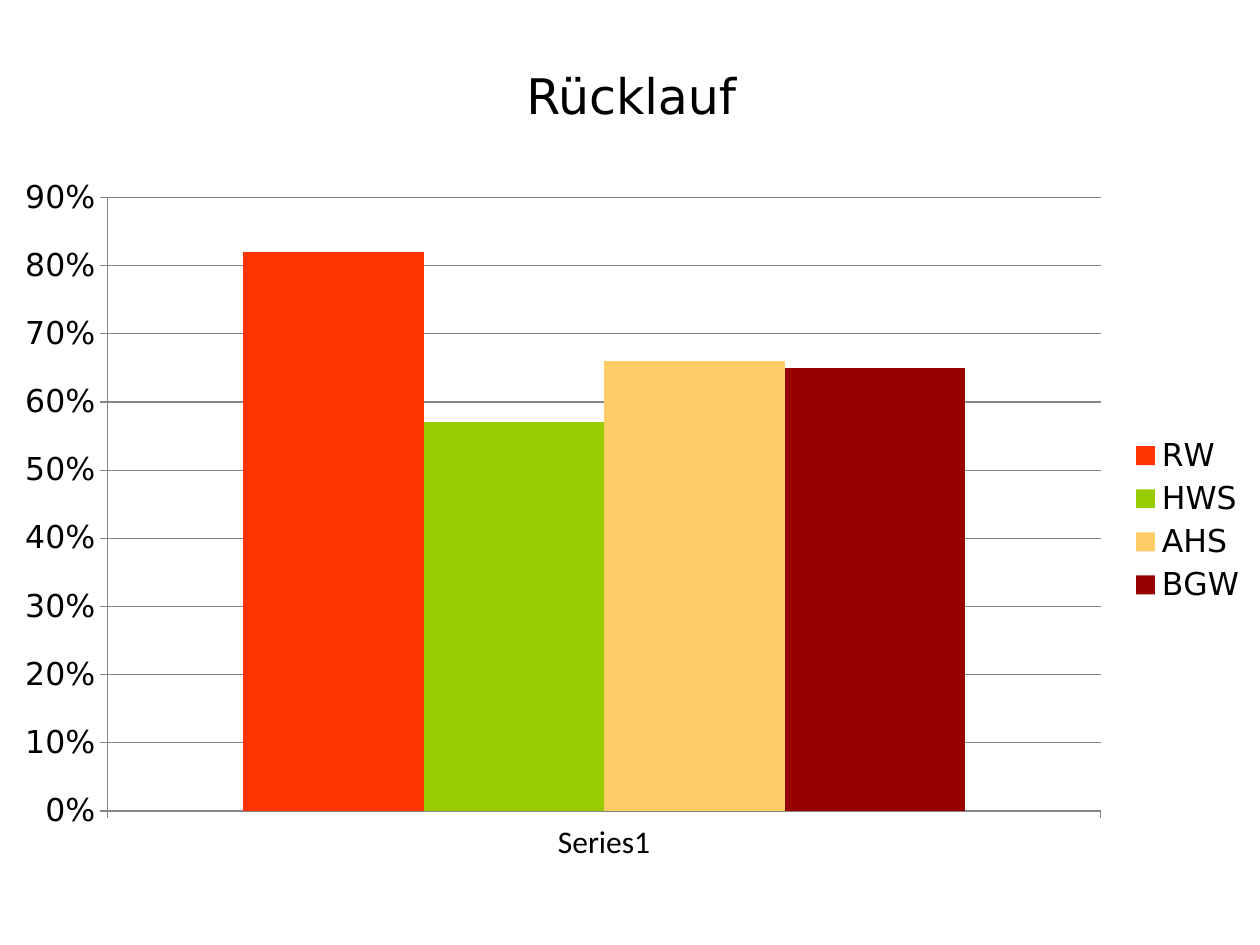
import pptx
import pptx.util
import pptx.chart.data
import pptx.dml.color
import pptx.enum.chart
import pptx.enum.text

Inches = pptx.util.Inches
Pt = pptx.util.Pt
SANS = "DejaVu Sans"
BARS = [
    ("RW", 0.82, "FF3300"),
    ("HWS", 0.57, "99CC00"),
    ("AHS", 0.66, "FFCC66"),
    ("BGW", 0.65, "990000"),
]


def paint(color, code):
    color.rgb = pptx.dml.color.RGBColor.from_string(code)


def style(font, name, size):
    font.name = name
    font.size = Pt(size)
    font.bold = False
    paint(font.color, "000000")


def rule(line):
    line.width = Pt(0.75)
    paint(line.color, "868686")


def add_title(slide, left, top, width, height):
    box = slide.shapes.add_textbox(left, top, width, height)
    frame = box.text_frame
    frame.word_wrap = True
    frame.vertical_anchor = pptx.enum.text.MSO_ANCHOR.MIDDLE
    par = frame.paragraphs[0]
    par.text = "Rücklauf"
    par.alignment = pptx.enum.text.PP_ALIGN.CENTER
    style(par.font, SANS, 28)


def add_bars(slide, left, top, width, height):
    kinds = pptx.enum.chart
    data = pptx.chart.data.CategoryChartData(number_format="0%")
    data.categories = ["Series1"]
    for name, value, code in BARS:
        data.add_series(name, [value])
    chart = slide.shapes.add_chart(
        kinds.XL_CHART_TYPE.COLUMN_CLUSTERED, left, top, width, height, data
    ).chart
    chart.has_title = False
    style(chart.font, "Calibri", 18)

    plot = chart.plots[0]
    plot.gap_width = 150
    plot.overlap = 0
    plot.vary_by_categories = False
    for series, (name, value, code) in zip(plot.series, BARS):
        series.format.fill.solid()
        paint(series.format.fill.fore_color, code)

    for axis in (chart.category_axis, chart.value_axis):
        axis.major_tick_mark = kinds.XL_TICK_MARK.OUTSIDE
        axis.minor_tick_mark = kinds.XL_TICK_MARK.NONE
        rule(axis.format.line)
    scale = chart.value_axis
    scale.minimum_scale = 0
    scale.maximum_scale = 0.9
    scale.major_unit = 0.1
    scale.has_major_gridlines = True
    rule(scale.major_gridlines.format.line)
    scale.tick_labels.number_format = "0%"
    scale.tick_labels.number_format_is_linked = False
    style(scale.tick_labels.font, SANS, 18)

    chart.has_legend = True
    chart.legend.position = kinds.XL_LEGEND_POSITION.RIGHT
    chart.legend.include_in_layout = False
    style(chart.legend.font, SANS, 18)


def main():
    deck = pptx.Presentation()
    deck.slide_width = Inches(10)
    deck.slide_height = Inches(7.5)
    slide = deck.slides.add_slide(deck.slide_layouts[6])
    add_title(slide, Inches(0.51), Inches(0.29), Inches(9), Inches(0.93))
    add_bars(slide, Inches(0), Inches(1.31), Inches(10), Inches(5.64))
    deck.save("out.pptx")


if __name__ == "__main__":
    main()
